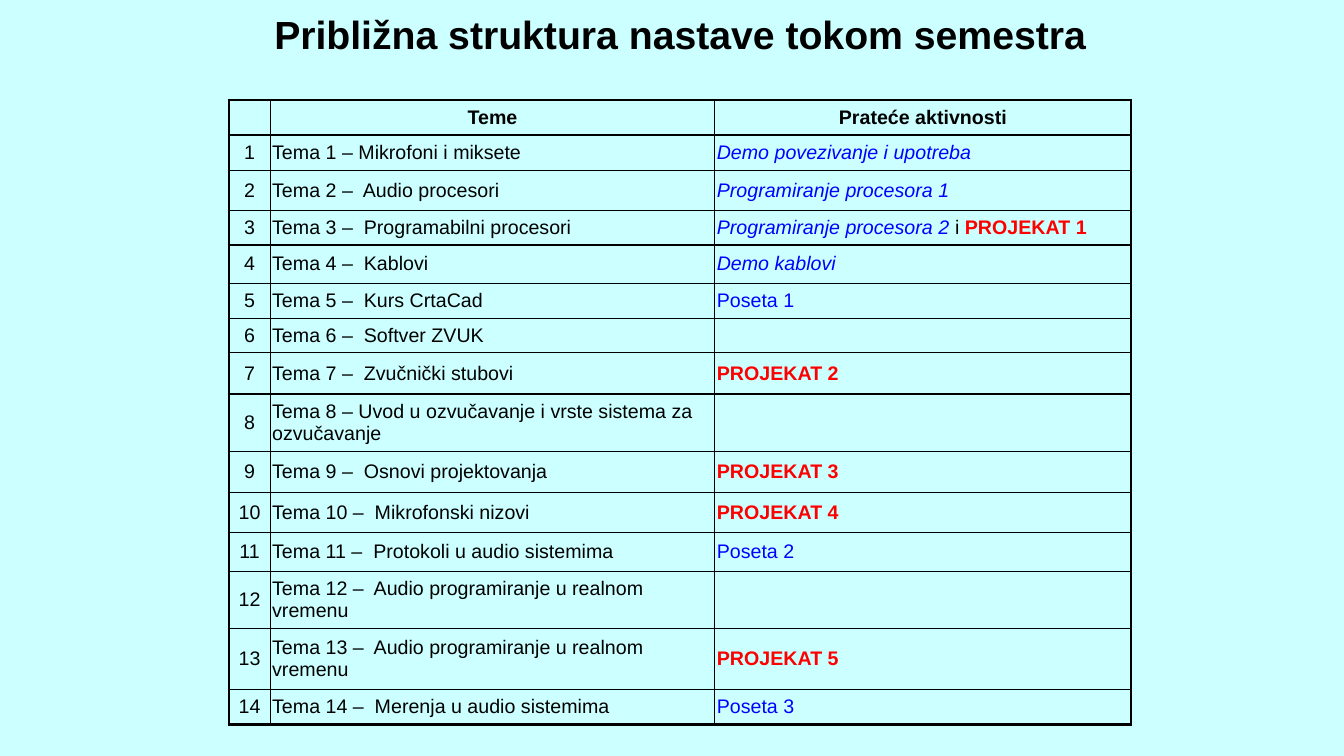
from lxml import etree
from pptx import Presentation
from pptx.dml.color import RGBColor
from pptx.enum.text import MSO_ANCHOR, PP_ALIGN
from pptx.oxml.ns import qn
from pptx.util import Inches, Pt

MIDDLE = MSO_ANCHOR.MIDDLE
LEFT, CENTER = PP_ALIGN.LEFT, PP_ALIGN.CENTER
BLACK, BLUE, RED = "000000", "0000FF", "FF0000"

DEMO = {"color": BLUE, "italic": True}
VISIT = {"color": BLUE}
TASK = {"color": RED, "bold": True}

TOPICS = [
    ("Tema 1 – Mikrofoni i miksete", [("Demo povezivanje i upotreba", DEMO)]),
    ("Tema 2 –  Audio procesori", [("Programiranje procesora 1", DEMO)]),
    ("Tema 3 –  Programabilni procesori",
     [("Programiranje procesora 2 ", DEMO), ("i ", {}), ("PROJEKAT 1", TASK)]),
    ("Tema 4 –  Kablovi", [("Demo kablovi", DEMO)]),
    ("Tema 5 –  Kurs CrtaCad", [("Poseta 1", VISIT)]),
    ("Tema 6 –  Softver ZVUK", []),
    ("Tema 7 –  Zvučnički stubovi", [("PROJEKAT 2", TASK)]),
    ("Tema 8 – Uvod u ozvučavanje i vrste sistema za ozvučavanje", []),
    ("Tema 9 –  Osnovi projektovanja", [("PROJEKAT 3", TASK)]),
    ("Tema 10 –  Mikrofonski nizovi", [("PROJEKAT 4", TASK)]),
    ("Tema 11 –  Protokoli u audio sistemima", [("Poseta 2", VISIT)]),
    ("Tema 12 –  Audio programiranje u realnom vremenu", []),
    ("Tema 13 –  Audio programiranje u realnom vremenu", [("PROJEKAT 5", TASK)]),
    ("Tema 14 –  Merenja u audio sistemima", [("Poseta 3", VISIT)]),
]
WIDTHS = [0.41, 4.41, 4.13]
HEIGHTS = [0.35, 0.35, 0.4, 0.34, 0.38, 0.35, 0.34, 0.41,
           0.57, 0.41, 0.39, 0.39, 0.57, 0.6, 0.35]


def paint(value):
    return RGBColor.from_string(value)


def write(para, text, size=14, color=BLACK, bold=False, italic=False):
    run = para.add_run()
    run.text = text
    font = run.font
    font.name = "Arial"
    font.size = Pt(size)
    font.bold = bold
    font.italic = italic
    font.color.rgb = paint(color)


def border(cell, sides):
    props = cell._tc.get_or_add_tcPr()
    for spot, (side, width) in enumerate(sides.items()):
        line = etree.Element(qn(f"a:ln{side}"), w=str(Pt(width)))
        fill = etree.SubElement(line, qn("a:solidFill"))
        etree.SubElement(fill, qn("a:srgbClr"), val=BLACK)
        props.insert(spot, line)


def fill_cell(cell, parts, align):
    cell.fill.background()
    cell.vertical_anchor = MIDDLE
    cell.margin_left = cell.margin_right = Inches(0.02)
    cell.margin_top = cell.margin_bottom = Inches(0.05)
    para = cell.text_frame.paragraphs[0]
    para.alignment = align
    for text, style in parts:
        write(para, text, **style)
    if not parts:
        etree.SubElement(para._p, qn("a:endParaRPr"), sz="1400")


def add_title(slide, left, top, width, height):
    box = slide.shapes.add_textbox(
        Inches(left), Inches(top), Inches(width), Inches(height))
    frame = box.text_frame
    frame.word_wrap = True
    para = frame.paragraphs[0]
    para.alignment = CENTER
    write(para, "Približna struktura nastave tokom semestra", size=28, bold=True)


def add_plan(slide, left, top):
    head = [[], [("Teme", {"bold": True})],
            [("Prateće aktivnosti", {"bold": True})]]
    rows = [head] + [[[(str(num), {})], [(topic, {})], extra]
                     for num, (topic, extra) in enumerate(TOPICS, 1)]
    last, end = len(rows) - 1, len(WIDTHS) - 1
    table = slide.shapes.add_table(
        len(rows), len(WIDTHS), Inches(left), Inches(top),
        Inches(sum(WIDTHS)), Inches(sum(HEIGHTS))).table
    table.first_row = table.horz_banding = False
    for col, width in zip(table.columns, WIDTHS):
        col.width = Inches(width)
    for row, height in zip(table.rows, HEIGHTS):
        row.height = Inches(height)
    for i, row in enumerate(rows):
        for j, parts in enumerate(row):
            cell = table.cell(i, j)
            fill_cell(cell, parts, CENTER if i == 0 or j == 0 else LEFT)
            border(cell, {
                "L": 2 if j == 0 else 1,
                "R": 2 if j == end else 1,
                "T": 2 if i <= 1 else 1,
                "B": 2 if i in (0, last) else 1,
            })


def main():
    deck = Presentation()
    deck.slide_width, deck.slide_height = Inches(13.33), Inches(7.5)
    slide = deck.slides.add_slide(deck.slide_layouts[6])
    back = slide.background.fill
    back.solid()
    back.fore_color.rgb = paint("CCFFFF")
    add_plan(slide, 2.27, 0.99)
    add_title(slide, 1.94, 0.05, 9.61, 0.57)
    deck.save("out.pptx")


if __name__ == "__main__":
    main()
